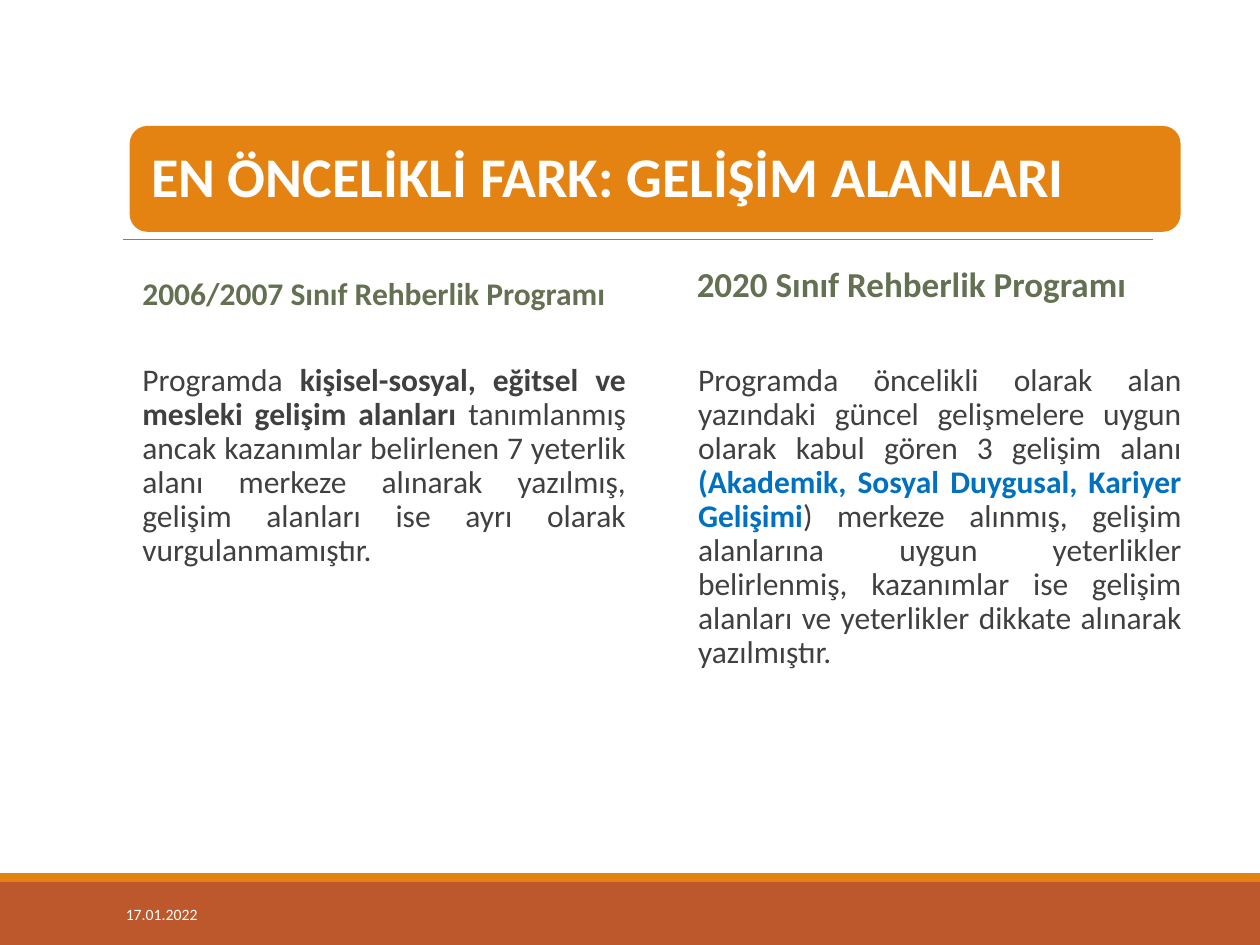
from lxml import etree
from pptx import Presentation
from pptx.dml.color import RGBColor
from pptx.enum import shapes, text
from pptx.oxml import ns
from pptx.util import Inches, Pt

ORANGE = RGBColor(0xE4, 0x83, 0x12)
RUST = RGBColor(0xBD, 0x58, 0x2C)
GREY = RGBColor(0x80, 0x80, 0x80)
OLIVE = RGBColor(0x63, 0x70, 0x52)
DARK = RGBColor(0x40, 0x40, 0x40)
BLUE = RGBColor(0x00, 0x70, 0xC0)
WHITE = RGBColor(0xFF, 0xFF, 0xFF)

TITLE = "EN ÖNCELİKLİ FARK: GELİŞİM ALANLARI"
DATE = "17.01.2022"

# Runs are (text, bold, colour)
PROGRAMS = [
    {
        "heading": "2006/2007 Sınıf Rehberlik Programı",
        "heading_size": 18,
        "heading_box": (1.03, 2.1, 3.94, 0.48),
        "body": [
            ("Programda ", False, DARK),
            ("kişisel-sosyal, eğitsel ve mesleki gelişim alanları", True, DARK),
            (" tanımlanmış ancak kazanımlar belirlenen 7 yeterlik alanı merkeze "
             "alınarak yazılmış, gelişim alanları ise ayrı olarak "
             "vurgulanmamıştır. ", False, DARK),
        ],
        "body_box": (1.03, 2.84, 3.94, 3.27),
    },
    {
        "heading": "2020 Sınıf Rehberlik Programı",
        "heading_size": 20,
        "heading_box": (5.43, 2.11, 3.94, 0.33),
        "body": [
            ("Programda öncelikli olarak alan yazındaki güncel gelişmelere uygun "
             "olarak kabul gören 3 gelişim alanı ", False, DARK),
            ("(Akademik, Sosyal Duygusal, Kariyer Gelişimi", True, BLUE),
            (") merkeze alınmış, gelişim alanlarına uygun yeterlikler belirlenmiş, "
             "kazanımlar ise gelişim alanları ve yeterlikler dikkate alınarak "
             "yazılmıştır. ", False, DARK),
        ],
        "body_box": (5.44, 2.84, 3.94, 2.94),
    },
]

# Kind, box, fill
PANELS = [
    (shapes.MSO_SHAPE.RECTANGLE, (0, 7, 10, 0.5), RUST),
    (shapes.MSO_SHAPE.RECTANGLE, (0, 6.93, 10, 0.07), ORANGE),
    (shapes.MSO_SHAPE.ROUNDED_RECTANGLE, (1.03, 1, 8.34, 0.84), ORANGE),
]


def write(holder, box, runs, size, align=text.PP_ALIGN.LEFT,
          anchor=text.MSO_ANCHOR.MIDDLE, insets=(0.1, 0.05), indent=0,
          line_spacing=0.9, before=0, after=0):
    """Place the holder and fill it with one unbulleted paragraph of runs."""
    holder.left, holder.top, holder.width, holder.height = map(Inches, box)
    frame = holder.text_frame
    frame.word_wrap = True
    frame.auto_size = text.MSO_AUTO_SIZE.NONE
    frame.vertical_anchor = anchor
    frame.margin_left = frame.margin_right = Inches(insets[0])
    frame.margin_top = frame.margin_bottom = Inches(insets[1])

    paragraph = frame.paragraphs[0]
    paragraph.alignment = align
    paragraph.line_spacing = line_spacing
    paragraph.space_before, paragraph.space_after = Pt(before), Pt(after)
    properties = paragraph._p.get_or_add_pPr()
    properties.set("marL", str(Inches(indent)))
    properties.set("indent", "0")
    etree.SubElement(properties, ns.qn("a:buNone"))

    for words, bold, color in runs:
        run = paragraph.add_run()
        run.text = words
        run.font.name = "Calibri"
        run.font.size = Pt(size)
        run.font.bold = bold
        run.font.color.rgb = color


def main():
    prs = Presentation()
    prs.slide_width, prs.slide_height = Inches(10), Inches(7.5)
    comparison = prs.slide_layouts.get_by_name("Comparison")
    slide = prs.slides.add_slide(comparison)

    decorations = []
    for kind, box, color in PANELS:
        panel = slide.shapes.add_shape(kind, *map(Inches, box))
        panel.shadow.inherit = False
        panel.fill.solid()
        panel.fill.fore_color.rgb = color
        panel.line.fill.background()
        decorations.append(panel)

    rule = slide.shapes.add_connector(
        shapes.MSO_CONNECTOR.STRAIGHT,
        Inches(0.98), Inches(1.9), Inches(9.15), Inches(1.9))
    rule.line.color.rgb = GREY
    rule.line.width = Pt(0.5)
    etree.SubElement(rule._element.spPr, ns.qn("a:effectLst"))
    decorations.append(rule)

    # Decorations go behind the placeholders
    first_placeholder = slide.shapes.title._element
    for decoration in decorations:
        first_placeholder.addprevious(decoration._element)

    write(slide.shapes.title, (1.07, 1.04, 8.26, 0.76), [(TITLE, True, WHITE)],
          32, insets=(0.13, 0.13))

    headings_and_bodies = list(slide.placeholders)[1:]
    for i, program in enumerate(PROGRAMS):
        heading, body = headings_and_bodies[2 * i:2 * i + 2]
        write(heading, program["heading_box"], [(program["heading"], True, OLIVE)],
              program["heading_size"], before=12, after=2)
        write(body, program["body_box"], program["body"], 18,
              align=text.PP_ALIGN.JUSTIFY, anchor=text.MSO_ANCHOR.TOP,
              insets=(0, 0.05), indent=0.1, before=12, after=2)

    date = slide.shapes.add_textbox(0, 0, 0, 0)
    write(date, (0.9, 7.06, 2.03, 0.4), [(DATE, False, WHITE)], 9, line_spacing=1)

    prs.save("out.pptx")


if __name__ == "__main__":
    main()
